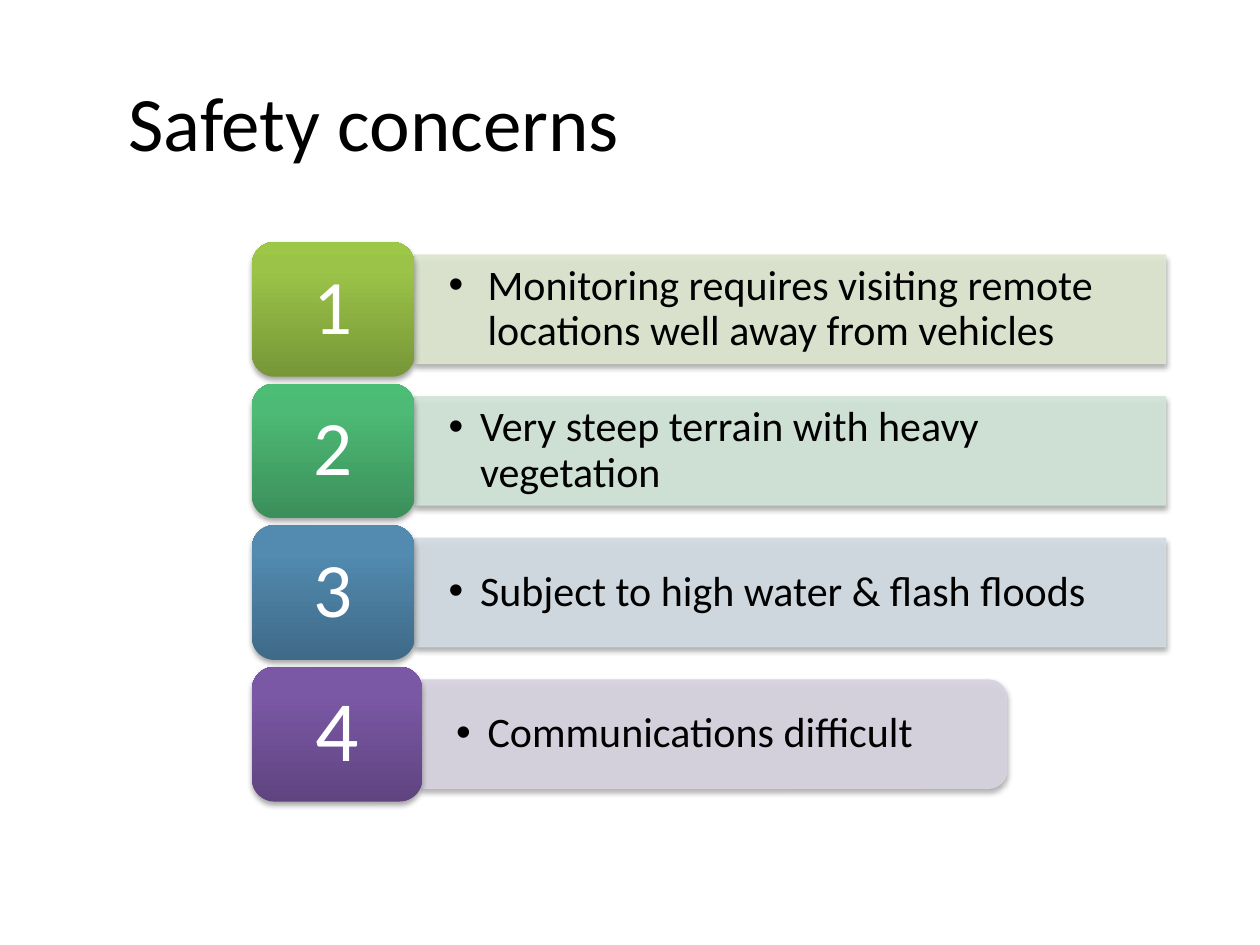
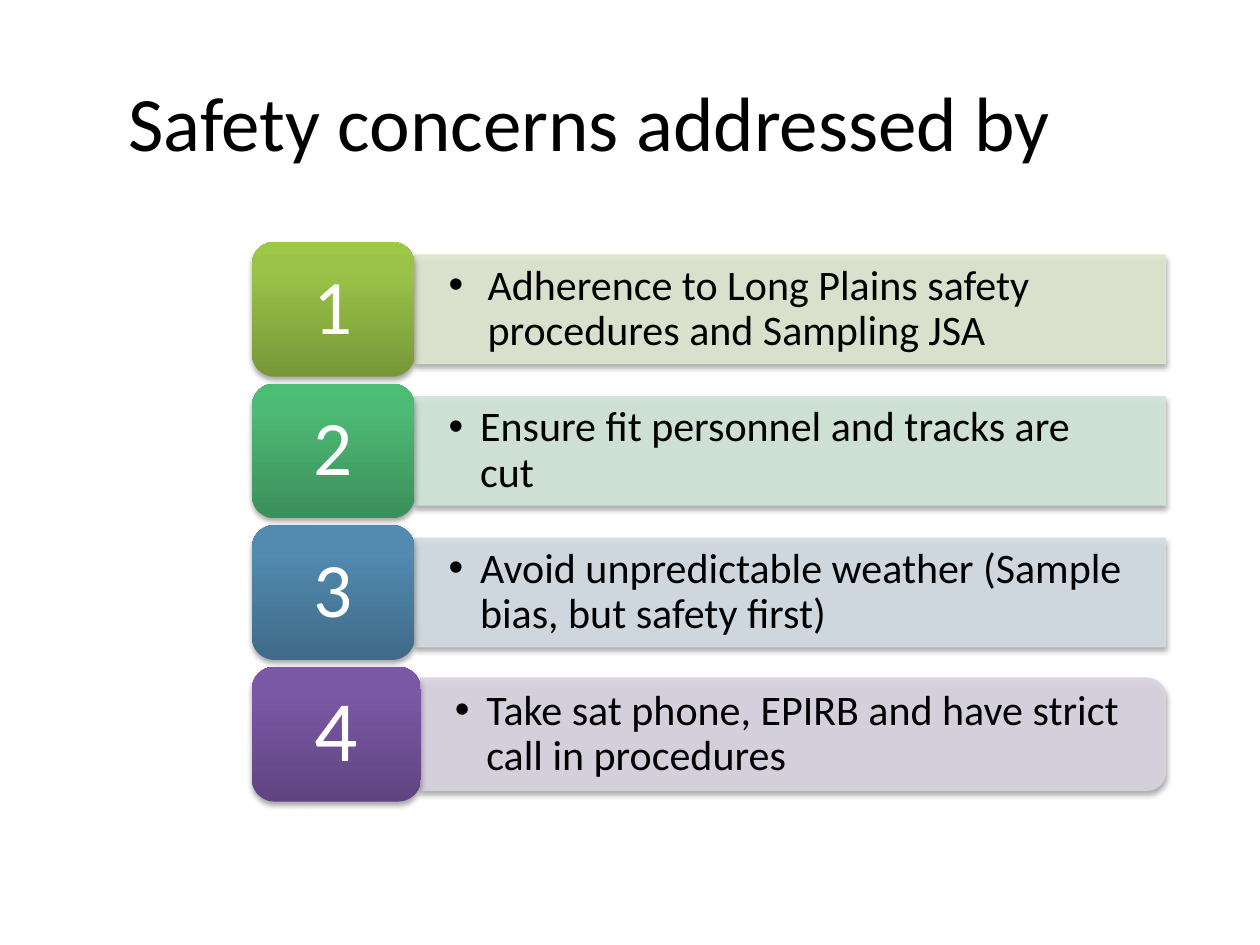
from copy import deepcopy

from pptx import Presentation
from pptx.dml.color import RGBColor
from pptx.enum.shapes import MSO_SHAPE
from pptx.enum.text import MSO_ANCHOR, PP_ALIGN
from pptx.oxml import parse_xml
from pptx.oxml.ns import nsdecls, qn
from pptx.util import Inches, Pt

RECTANGLE = MSO_SHAPE.RECTANGLE
ROUNDED = MSO_SHAPE.ROUNDED_RECTANGLE
ROUNDED_END = MSO_SHAPE.ROUND_2_SAME_RECTANGLE
MIDDLE = MSO_ANCHOR.MIDDLE
LEFT, CENTER = PP_ALIGN.LEFT, PP_ALIGN.CENTER

FONT = "Calibri"
BLACK = RGBColor(0x00, 0x00, 0x00)
WHITE = RGBColor(0xFF, 0xFF, 0xFF)
GREEN = (RGBColor(0x77, 0x97, 0x37), RGBColor(0x9B, 0xC3, 0x48), RGBColor(0x9D, 0xC7, 0x46))
JADE = (RGBColor(0x3B, 0x8F, 0x5A), RGBColor(0x4D, 0xBA, 0x75), RGBColor(0x4B, 0xBD, 0x75))
BLUE = (RGBColor(0x3F, 0x6A, 0x88), RGBColor(0x52, 0x8A, 0xB0), RGBColor(0x51, 0x8B, 0xB3))
PURPLE = (RGBColor(0x5F, 0x44, 0x80), RGBColor(0x7B, 0x58, 0xA6), RGBColor(0x7C, 0x57, 0xA8))
PALE_GREEN = RGBColor(0xDE, 0xE7, 0xD1)
PALE_JADE = RGBColor(0xD2, 0xE5, 0xD9)
PALE_BLUE = RGBColor(0xD2, 0xDC, 0xE2)
PALE_PURPLE = RGBColor(0xD8, 0xD3, 0xE0)

ROWS = [
    {"tile": GREEN, "bar": PALE_GREEN, "outline": RECTANGLE, "size": 44, "indent": 0.31, "trim": 0},
    {"tile": JADE, "bar": PALE_JADE, "outline": RECTANGLE, "size": 44, "indent": 0.25, "trim": 0},
    {"tile": BLUE, "bar": PALE_BLUE, "outline": RECTANGLE, "size": 44, "indent": 0.25, "trim": 0},
    {"tile": PURPLE, "bar": PALE_PURPLE, "outline": ROUNDED_END, "size": 49, "indent": 0.25, "trim": 0.04},
]

SLIDES = [
    {
        "title": "Safety concerns",
        "points": [
            "Monitoring requires visiting remote locations well away from vehicles",
            "Very steep terrain with heavy vegetation",
            "Subject to high water & flash floods",
            "Communications difficult",
        ],
        "last_row": {"tile_width": 1.35, "bar_width": 4.64, "bar_height": 0.86},
    },
    {
        "title": "Safety concerns addressed by",
        "points": [
            "Adherence to Long Plains safety procedures and Sampling JSA",
            "Ensure fit personnel and tracks are cut",
            "Avoid unpredictable weather (Sample bias, but safety first)",
            "Take sat phone, EPIRB and have strict call in procedures",
        ],
        "last_row": {"tile_width": 1.34, "bar_width": 5.91, "bar_height": 0.89},
    },
]
ROW_SIZES = {"tile_width": 1.29, "bar_width": 5.96, "bar_height": 0.86}
TILE_LEFT, FIRST_TOP, TILE_HEIGHT, ROW_PITCH = 2, 1.92, 1.07, 1.124


def add_shadow(shape):
    shape.shadow.inherit = False
    shape._element.spPr.find(qn("a:effectLst")).append(parse_xml(
        f'<a:outerShdw {nsdecls("a")} blurRad="40000" dist="23000" dir="5400000" rotWithShape="0">'
        '<a:srgbClr val="000000"><a:alpha val="35000"/></a:srgbClr></a:outerShdw>'))


def write(shape, text, size, color, alignment, inset_x, inset_y, indent=0):
    frame = shape.text_frame
    frame.word_wrap = True
    frame.vertical_anchor = MIDDLE
    frame.margin_left = frame.margin_right = Inches(inset_x)
    frame.margin_top = frame.margin_bottom = Inches(inset_y)
    paragraph = frame.paragraphs[0]
    paragraph.text = text
    paragraph.alignment = alignment
    paragraph.line_spacing = 0.9
    if indent:
        properties = paragraph._p.get_or_add_pPr()
        properties.set("marL", str(Inches(indent)))
        properties.set("indent", str(-Inches(indent)))
        properties.append(parse_xml(f'<a:buFont {nsdecls("a")} typeface="Arial"/>'))
        properties.append(parse_xml(f'<a:buChar {nsdecls("a")} char="•"/>'))
    paragraph.font.name = FONT
    paragraph.font.size = Pt(size)
    paragraph.font.color.rgb = color


def add_bar(slide, outline, color, left, middle, width, height):
    bar = slide.shapes.add_shape(
        outline, Inches(left + (width - height) / 2), Inches(middle - width / 2),
        Inches(height), Inches(width))
    bar.rotation = 90
    bar.fill.solid()
    bar.fill.fore_color.rgb = color
    bar.line.color.rgb = color
    bar.line.width = Pt(0.75)
    for solid_color in bar._element.spPr.iter(qn("a:srgbClr")):
        solid_color.append(parse_xml(f'<a:alpha {nsdecls("a")} val="90000"/>'))
    add_shadow(bar)


def add_tile(slide, number, colors, size, top, width):
    tile = slide.shapes.add_shape(
        ROUNDED, Inches(TILE_LEFT), Inches(top), Inches(width), Inches(TILE_HEIGHT))
    tile.fill.gradient()
    tile.fill.gradient_angle = 90
    stops = tile._element.spPr.find(f'{qn("a:gradFill")}/{qn("a:gsLst")}')
    stops.append(deepcopy(stops[-1]))
    for stop, position, color in zip(tile.fill.gradient_stops, (0, 0.8, 1), colors):
        stop.position = position
        stop.color.rgb = color
    tile.line.fill.background()
    add_shadow(tile)
    write(tile, str(number), size, WHITE, CENTER, 0.18, 0.09)


def add_row(slide, index, row, point, sizes):
    top = FIRST_TOP + index * ROW_PITCH
    middle = top + TILE_HEIGHT / 2
    left = TILE_LEFT + sizes["tile_width"]
    width, height, trim = sizes["bar_width"], sizes["bar_height"], row["trim"]
    add_bar(slide, row["outline"], row["bar"], left, middle, width, height)
    label = slide.shapes.add_textbox(
        Inches(left), Inches(middle - height / 2 + trim),
        Inches(width - trim), Inches(height - 2 * trim))
    write(label, point, 24, BLACK, LEFT, 0.27, 0.14, row["indent"])
    add_tile(slide, index + 1, row["tile"], row["size"], top, sizes["tile_width"])


def add_title(slide, text):
    title = slide.shapes.title
    title.left, title.top = Inches(0.92), Inches(0.33)
    title.width, title.height = Inches(8.83), Inches(1.25)
    title.text_frame.vertical_anchor = MIDDLE
    paragraph = title.text_frame.paragraphs[0]
    paragraph.text = text
    paragraph.alignment = LEFT
    paragraph.font.name = FONT
    paragraph.font.size = Pt(44)
    paragraph.font.color.rgb = BLACK


def main():
    presentation = Presentation()
    presentation.slide_width, presentation.slide_height = Inches(10), Inches(7.5)
    for content in SLIDES:
        slide = presentation.slides.add_slide(presentation.slide_layouts[5])
        add_title(slide, content["title"])
        row_sizes = [ROW_SIZES] * (len(ROWS) - 1) + [content["last_row"]]
        for index, (row, point, sizes) in enumerate(zip(ROWS, content["points"], row_sizes)):
            add_row(slide, index, row, point, sizes)
    presentation.save("out.pptx")


if __name__ == "__main__":
    main()
